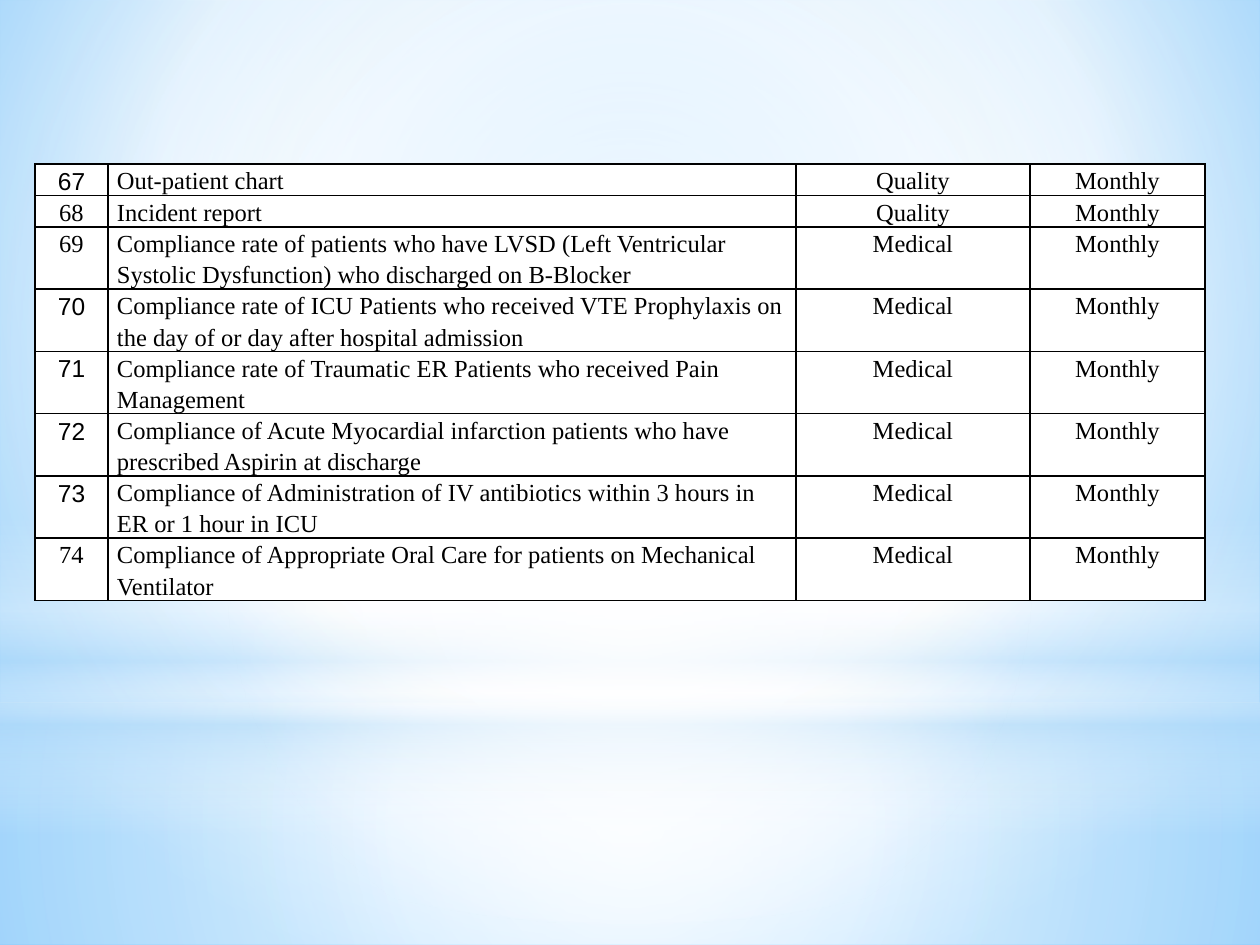
from lxml import etree
from pptx import Presentation
from pptx.dml.color import RGBColor
from pptx.enum.shapes import MSO_SHAPE
from pptx.enum.text import PP_ALIGN
from pptx.oxml.ns import qn
from pptx.util import Emu, Pt

RECT, OVAL = MSO_SHAPE.RECTANGLE, MSO_SHAPE.OVAL
LEFT, CENTER = PP_ALIGN.LEFT, PP_ALIGN.CENTER
WHITE = RGBColor(0xFF, 0xFF, 0xFF)
BLACK = RGBColor(0x00, 0x00, 0x00)
SKY = RGBColor(0x9E, 0xD5, 0xFF)
DEEP = RGBColor(0x5B, 0xB9, 0xFF)
PALE = RGBColor(0xB4, 0xDC, 0xFA)
SCALE = 914400 / 126
W, H, HORIZON = 1260, 945, 703
MIDDLE = (50, 50, 50, 50)
SERIF, SANS, COMPLEX = "Times New Roman", "Calibri", "Arial"
COLUMNS = (73, 688, 234, 175)
LINE_HEIGHT = 31
RTL_NUMBERS = {"67", "70", "71", "72", "73"}
INDICATORS = [
    ("67", "Out-patient chart", "Quality", 1),
    ("68", "Incident report", "Quality", 1),
    ("69", "Compliance rate of patients who have LVSD (Left Ventricular Systolic "
           "Dysfunction) who discharged on B-Blocker", "Medical", 2),
    ("70", "Compliance rate of ICU Patients who received VTE Prophylaxis on the day "
           "of or day after hospital admission", "Medical", 2),
    ("71", "Compliance rate of Traumatic ER Patients who received Pain Management",
     "Medical", 2),
    ("72", "Compliance of Acute Myocardial infarction patients who have prescribed "
           "Aspirin at discharge", "Medical", 2),
    ("73", "Compliance of Administration of IV antibiotics within 3 hours in ER or "
           "1 hour in ICU", "Medical", 2),
    ("74", "Compliance of Appropriate Oral Care for patients on Mechanical Ventilator",
     "Medical", 2),
]


def px(n):
    return Emu(round(n * SCALE))


def child(parent, tag, **attrs):
    return etree.SubElement(parent, qn(tag), {k: str(v) for k, v in attrs.items()})


class IndicatorSlide:
    """Holds the slide and the style of its backdrop and indicator table."""

    margins = {"margin_left": px(9), "margin_right": px(9),
               "margin_top": 0, "margin_bottom": 0}
    font = {"size": Pt(14), "bold": False}

    def __init__(self, prs):
        self.s = prs.slides.add_slide(prs.slide_layouts[6])

    def gradient(self, fill, root, stops, focus=None):
        fill.gradient()
        grad = next(root.iter(qn("a:gradFill")))
        for old in list(grad):
            grad.remove(old)
        grad.set("rotWithShape", "1")
        stop_list = child(grad, "a:gsLst")
        for pos, color, alpha in stops:
            stop = child(stop_list, "a:gs", pos=pos * 1000)
            clr = child(stop, "a:srgbClr", val=color)
            if alpha < 100:
                child(clr, "a:alpha", val=alpha * 1000)
        if focus:
            route = child(grad, "a:path", path="circle")
            child(route, "a:fillToRect",
                  **{side: v * 1000 for side, v in zip("ltrb", focus)})
        else:
            child(grad, "a:lin", ang=90 * 60000, scaled=0)

    def background(self, stops, focus):
        self.gradient(self.s.background.fill, self.s._element, stops, focus)

    def glow(self, kind, top, height, stops, focus=None):
        sp = self.s.shapes.add_shape(kind, 0, px(top), px(W), px(height))
        sp.shadow.inherit = False
        sp.line.fill.background()
        self.gradient(sp.fill, sp._element, stops, focus)

    def cell(self, cell, runs, align, rtl=False):
        for name, value in self.margins.items():
            setattr(cell, name, value)
        cell.fill.solid()
        cell.fill.fore_color.rgb = WHITE
        p = cell.text_frame.paragraphs[0]
        p.alignment, p.line_spacing = align, 1.15
        if rtl:
            p._p.get_or_add_pPr().set("rtl", "1")
        for text, face in runs:
            r = p.add_run()
            r.text = text
            for name, value in {**self.font, "name": face}.items():
                setattr(r.font, name, value)
            r.font.color.rgb = BLACK
            child(r._r.get_or_add_rPr(), "a:cs", typeface=COMPLEX if rtl else SERIF)
        self.borders(cell)

    def borders(self, cell):
        tc_pr = cell._tc.get_or_add_tcPr()
        for i, side in enumerate("LRTB"):
            ln = etree.Element(qn("a:ln" + side), w=str(Pt(1)))
            child(child(ln, "a:solidFill"), "a:srgbClr", val=BLACK)
            tc_pr.insert(i, ln)

    def table(self, left, top, rows):
        heights = [row[-1] * LINE_HEIGHT for row in rows]
        table = self.s.shapes.add_table(
            len(rows), len(COLUMNS), px(left), px(top),
            px(sum(COLUMNS)), px(sum(heights))).table
        table.first_row = table.horz_banding = False
        for column, width in zip(table.columns, COLUMNS):
            column.width = px(width)
        for row, height, (number, title, team, _) in zip(table.rows, heights, rows):
            row.height = px(height)
            rtl = number in RTL_NUMBERS
            digits = list(zip(number, (SANS, SERIF))) if rtl else [(number, SERIF)]
            self.cell(row.cells[0], digits, CENTER, rtl)
            texts = ((title, LEFT), (team, CENTER), ("Monthly", CENTER))
            for i, (text, align) in enumerate(texts, 1):
                self.cell(row.cells[i], [(text, SERIF)], align)


def main():
    prs = Presentation()
    prs.slide_width, prs.slide_height = px(W), px(H)
    page = IndicatorSlide(prs)
    page.background([(0, SKY, 100), (60, WHITE, 100), (100, DEEP, 100)],
                    (20, 10, 20, 60))
    page.glow(RECT, HORIZON, H - HORIZON,
              [(0, WHITE, 91), (37, WHITE, 76), (100, PALE, 79)], MIDDLE)
    page.glow(RECT, 0, HORIZON,
              [(0, WHITE, 89), (48, WHITE, 62), (100, PALE, 79)], MIDDLE)
    page.glow(RECT, 519, 315,
              [(0, WHITE, 0), (29, WHITE, 30), (45, PALE, 40),
               (55, WHITE, 26), (65, PALE, 60), (100, WHITE, 0)])
    page.glow(OVAL, 220, HORIZON, [(0, WHITE, 100), (56, WHITE, 0)], MIDDLE)
    page.table(35, 164, INDICATORS)
    prs.save("out.pptx")


if __name__ == "__main__":
    main()
